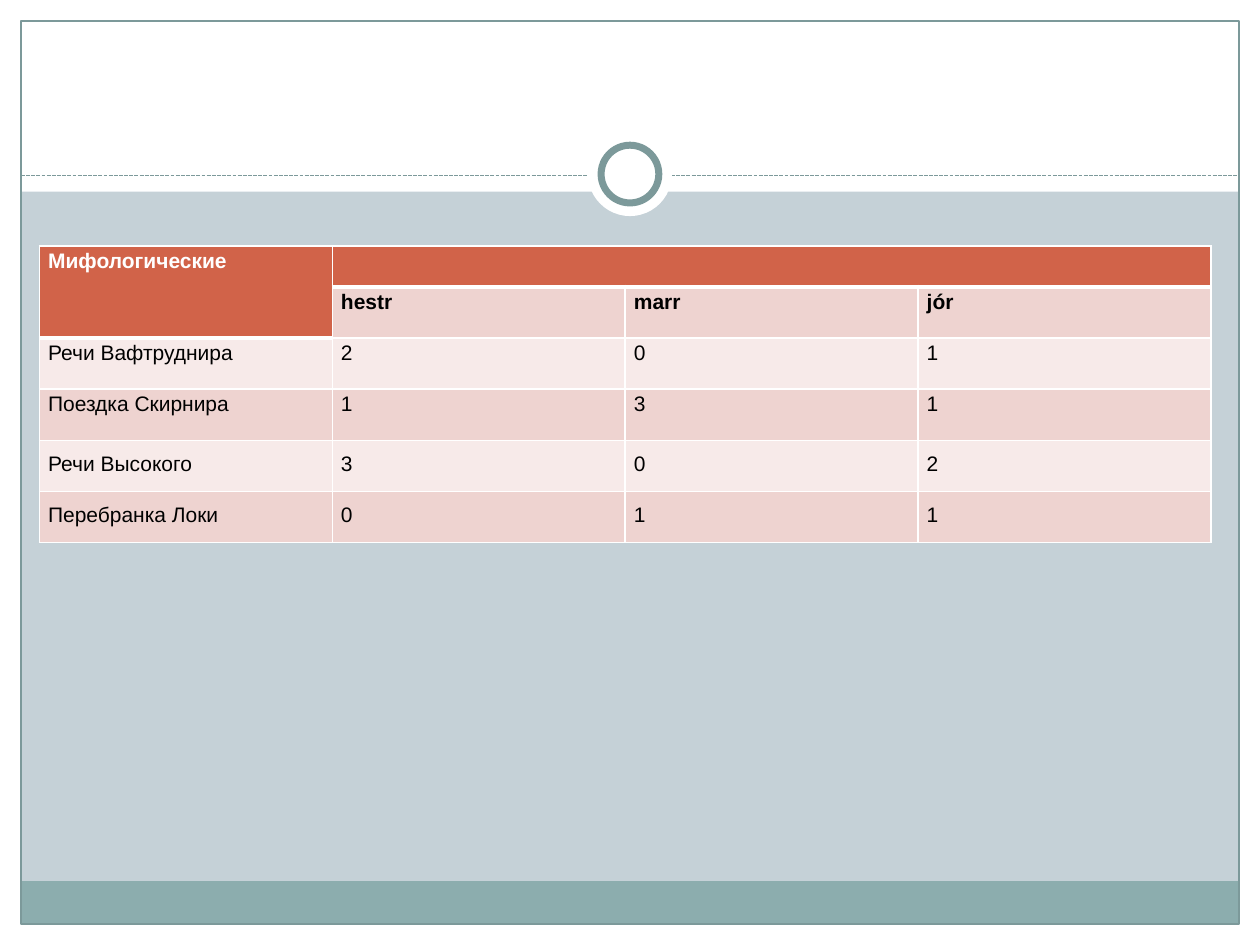
from pptx import Presentation
from pptx.dml.color import RGBColor
from pptx.enum.dml import MSO_LINE
from pptx.enum.shapes import MSO_CONNECTOR, MSO_SHAPE
from pptx.enum.text import PP_ALIGN
from pptx.oxml.ns import qn
from pptx.util import Pt
from lxml.etree import SubElement

W, H = 720, 540
MARGIN = 12
WHITE, BLACK, TEAL, SLATE = "FFFFFF", "000000", "8CADAE", "7C999A"
HEADER, BANDS = "D16349", ("F7EAE9", "EED3D0")
ROWS = [
    ["Мифологические", "", "", ""],
    ["", "hestr", "marr", "jór"],
    ["Речи Вафтруднира", "2", "0", "1"],
    ["Поездка Скирнира", "1", "3", "1"],
    ["Речи Высокого", "3", "0", "2"],
    ["Перебранка Локи", "0", "1", "1"],
]


def rgb(color):
    return RGBColor.from_string(color)


def add_box(s, x, y, w, h, fill=None, line=None, width=0.75, kind=MSO_SHAPE.RECTANGLE):
    sp = s.shapes.add_shape(kind, Pt(x), Pt(y), Pt(w), Pt(h))
    sp.shadow.inherit = False
    if fill:
        sp.fill.solid()
        sp.fill.fore_color.rgb = rgb(fill)
    else:
        sp.fill.background()
    if line:
        sp.line.color.rgb = rgb(line)
        sp.line.width = Pt(width)
    else:
        sp.line.fill.background()


def add_circle(s, cx, cy, d, **fmt):
    add_box(s, cx - d / 2, cy - d / 2, d, d, kind=MSO_SHAPE.OVAL, **fmt)


def set_text(cell, text, size=12, color=BLACK, bold=False, spacing=1.15):
    cell.margin_left = cell.margin_right = Pt(5)
    cell.margin_top = cell.margin_bottom = 0
    p = cell.text_frame.paragraphs[0]
    p.alignment = PP_ALIGN.JUSTIFY
    p.line_spacing = spacing
    p.font.size = Pt(size)
    if text:
        r = p.add_run()
        r.text = text
        r.font.name = "Arial"
        r.font.size = Pt(size)
        r.font.bold = bold
        r.font.color.rgb = rgb(color)


def set_borders(cell, top=1, bottom=1):
    tcPr = cell._tc.get_or_add_tcPr()
    for side, width in (("L", 1), ("R", 1), ("T", top), ("B", bottom)):
        ln = SubElement(tcPr, qn(f"a:ln{side}"), w=str(Pt(width)))
        fill = SubElement(ln, qn("a:solidFill"))
        SubElement(fill, qn("a:srgbClr"), val=WHITE)


def is_header(row, col):
    return row == 0 or (row == 1 and col == 0)


def add_frame(s, x, y, w, h):
    # White page edges and title band
    add_box(s, 0, y + h, W, H - y - h, WHITE)
    add_box(s, 0, 0, W, 109.5, WHITE)
    add_box(s, 0, 0, x, H, WHITE)
    add_box(s, x + w, 0, W - x - w, H, WHITE)
    # Footer band and outline
    add_box(s, x, y + h - 24.5, w, 24.5, TEAL)
    add_box(s, x, y, w, h, line=SLATE)
    # Dashed divider
    cn = s.shapes.add_connector(
        MSO_CONNECTOR.STRAIGHT, Pt(x), Pt(100.5), Pt(x + w), Pt(100.5))
    cn.line.color.rgb = rgb(SLATE)
    cn.line.width = Pt(0.75)
    cn.line.dash_style = MSO_LINE.SQUARE_DOT
    SubElement(cn._element.spPr, qn("a:effectLst"))
    # Ring on the divider
    add_circle(s, x + w / 2, 99.5, 48, fill=WHITE)
    add_circle(s, x + w / 2, 99.5, 33, fill=WHITE, line=SLATE, width=4)


def add_word_table(s, x, y, w, h):
    n_rows, n_cols = len(ROWS), len(ROWS[0])
    head_h = 23.5
    tbl = s.shapes.add_table(n_rows, n_cols, Pt(x), Pt(y), Pt(w), Pt(h)).table
    tbl.first_row = tbl.horz_banding = False
    for col in tbl.columns:
        col.width = Pt(w / n_cols)
    for i, row in enumerate(tbl.rows):
        row.height = Pt(head_h if i == 0 else (h - head_h) / (n_rows - 1))
    for i, texts in enumerate(ROWS):
        for j, text in enumerate(texts):
            cell, head = tbl.cell(i, j), is_header(i, j)
            set_text(cell, text, color=WHITE if head else BLACK,
                     bold=i < 2, spacing=1.5 if i > 3 else 1.15)
            # Thick rule where the header meets the body
            set_borders(
                cell,
                top=3 if not head and is_header(i - 1, j) else 1,
                bottom=3 if head and (j > 0 or i == 1) else 1)
            cell.fill.solid()
            cell.fill.fore_color.rgb = rgb(HEADER if head else BANDS[i % 2])
    # The merged first cell carries the rule of its last row
    corner = tbl.cell(0, 0)
    corner._tc.tcPr.find(qn("a:lnB")).set("w", str(Pt(3)))
    corner.merge(tbl.cell(1, 0))
    tbl.cell(0, 1).merge(tbl.cell(0, n_cols - 1))


def main():
    prs = Presentation()
    prs.slide_width, prs.slide_height = Pt(W), Pt(H)
    s = prs.slides.add_slide(prs.slide_layouts[6])
    s.background.fill.solid()
    s.background.fill.fore_color.rgb = rgb("C5D1D7")
    add_frame(s, MARGIN, MARGIN, W - 2 * MARGIN, H - 2 * MARGIN)
    add_word_table(s, 22.5, 140.5, 669.5, 169.5)
    prs.save("out.pptx")


if __name__ == "__main__":
    main()
